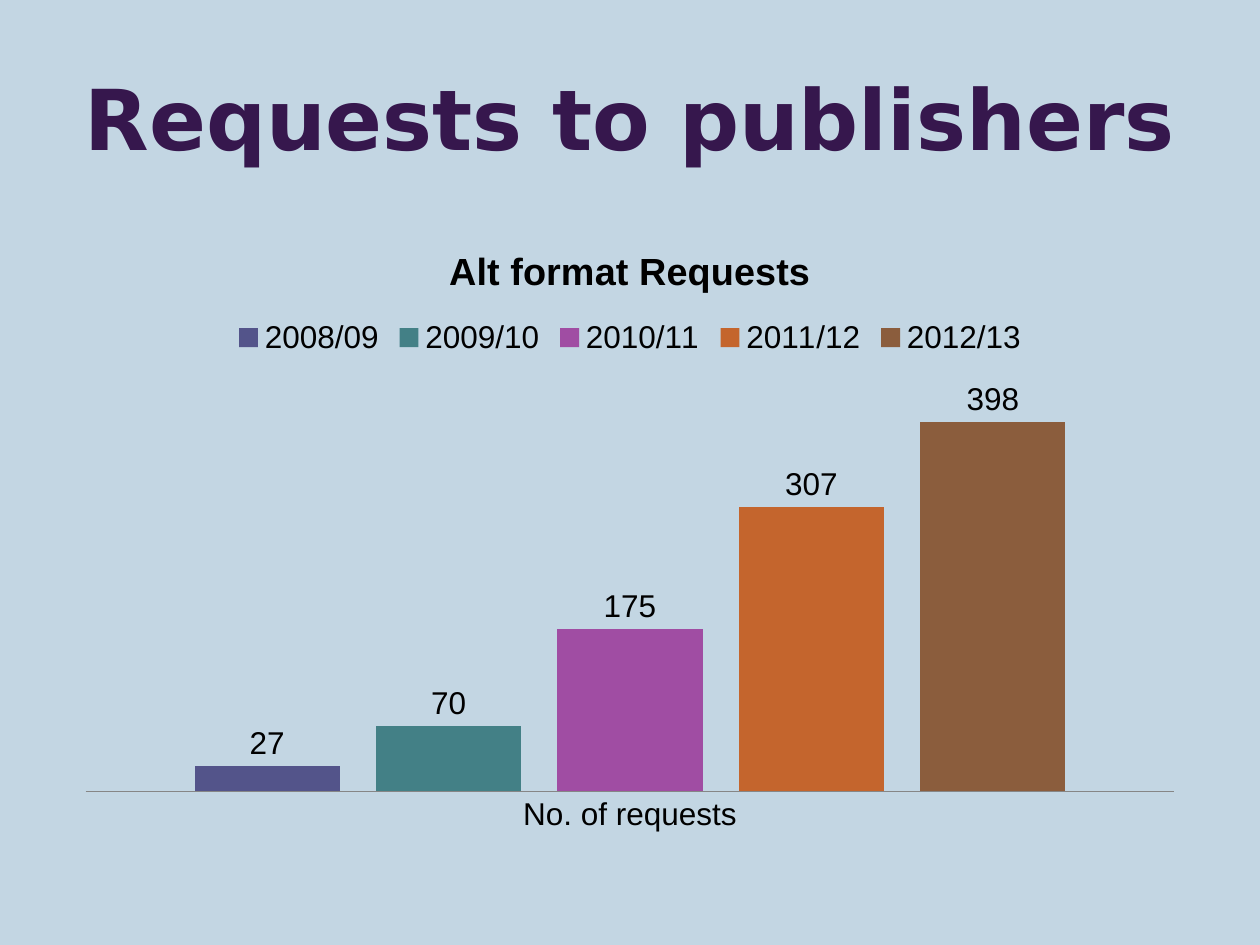
from pptx import Presentation
from pptx.chart.data import CategoryChartData
from pptx.dml.color import RGBColor
from pptx.enum import chart as ch, text
from pptx.util import Pt

TITLE = "Requests to publishers"
CHART_TITLE = "Alt format Requests"
CATEGORY = "No. of requests"
YEARS = [
    ("2008/09", 27, "53548A"),
    ("2009/10", 70, "438086"),
    ("2010/11", 175, "A04DA3"),
    ("2011/12", 307, "C4652D"),
    ("2012/13", 398, "8B5D3D"),
]
LEFT, WIDTH = 36, 648


def paint(fill, color):
    fill.solid()
    fill.fore_color.rgb = RGBColor.from_string(color)


def style(font, size, color="000000", bold=False, name="Arial"):
    font.size, font.bold, font.name = Pt(size), bold, name
    paint(font.fill, color)


def write(tf, content, **fmt):
    p = tf.paragraphs[0]
    p.alignment = text.PP_ALIGN.CENTER
    r = p.add_run()
    r.text = content
    style(r.font, **fmt)


def add_title(s):
    tf = s.shapes.add_textbox(Pt(LEFT), Pt(21.6), Pt(WIDTH), Pt(90)).text_frame
    tf.word_wrap = True
    tf.vertical_anchor = text.MSO_ANCHOR.MIDDLE
    write(tf, TITLE, size=48, color="36174D", bold=True, name="DejaVu Sans")


def add_requests_chart(s):
    data = CategoryChartData()
    data.categories = [CATEGORY]
    for year, requests, _ in YEARS:
        data.add_series(year, [requests])
    chart = s.shapes.add_chart(
        ch.XL_CHART_TYPE.COLUMN_CLUSTERED,
        Pt(LEFT), Pt(126), Pt(WIDTH), Pt(356.4), data).chart
    style(chart.font, 18)

    chart.has_title = True
    write(chart.chart_title.text_frame, CHART_TITLE, size=21.6, bold=True)
    chart.chart_title.include_in_layout = False

    chart.has_legend = True
    chart.legend.position = ch.XL_LEGEND_POSITION.TOP
    chart.legend.include_in_layout = False

    chart.value_axis.visible = False
    chart.value_axis.has_major_gridlines = False
    axis = chart.category_axis
    axis.major_tick_mark = ch.XL_TICK_MARK.NONE
    axis.format.line.width = Pt(0.75)
    paint(axis.format.line.fill, "868686")

    plot = chart.plots[0]
    plot.vary_by_categories = False
    plot.gap_width, plot.overlap = 150, -25
    for series, (_, _, color) in zip(plot.series, YEARS):
        paint(series.format.fill, color)
        labels = series.data_labels
        labels.show_value = True
        labels.position = ch.XL_LABEL_POSITION.OUTSIDE_END
        style(labels.font, 18)


def main():
    prs = Presentation()
    prs.slide_width, prs.slide_height = Pt(720), Pt(540)
    s = prs.slides.add_slide(prs.slide_layouts[6])
    paint(s.background.fill, "C3D6E3")
    add_title(s)
    add_requests_chart(s)
    prs.save("out.pptx")


if __name__ == "__main__":
    main()
